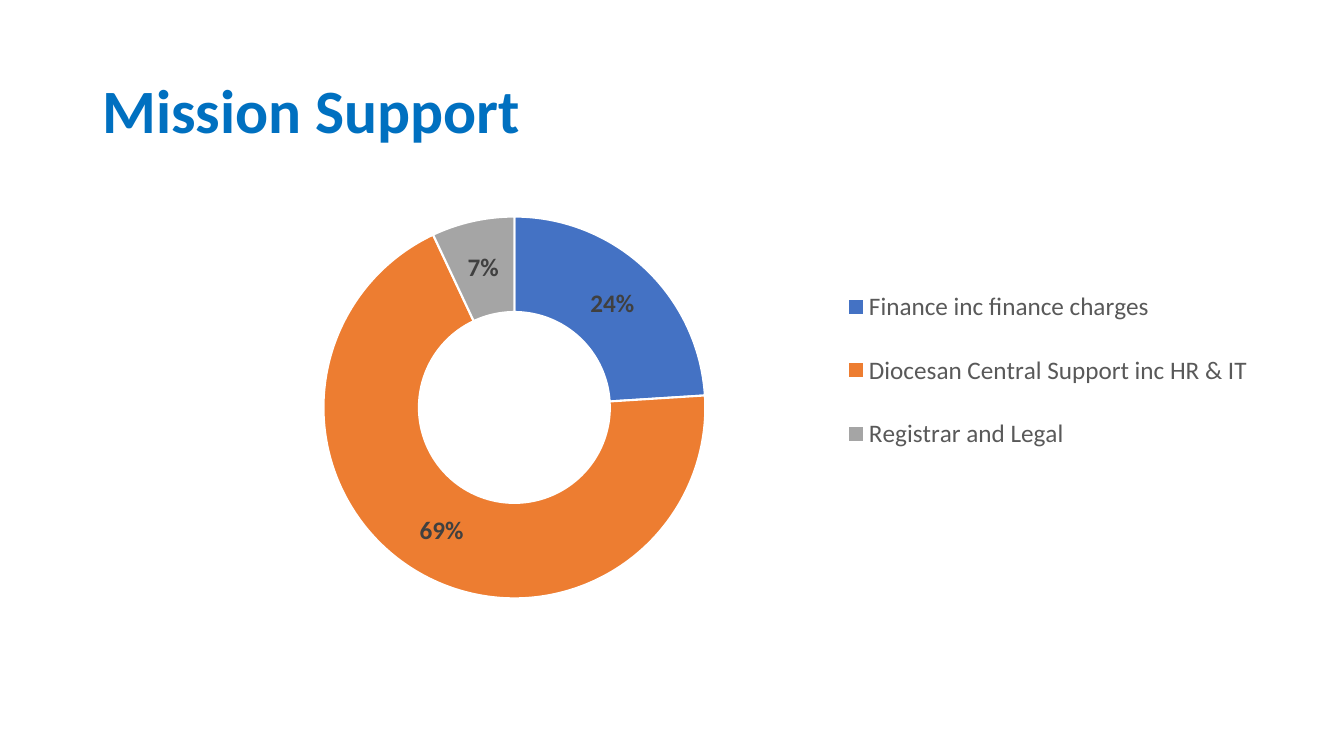
from lxml.etree import SubElement
from pptx import Presentation
from pptx.chart.data import CategoryChartData
from pptx.dml.color import RGBColor
from pptx.enum.chart import XL_CHART_TYPE, XL_LEGEND_POSITION
from pptx.enum.text import MSO_ANCHOR, PP_ALIGN
from pptx.oxml.ns import qn
from pptx.util import Cm, Pt

COLOURS = {
    "title": "0070C0",
    "finance": "4472C4",
    "central": "ED7D31",
    "legal": "A5A5A5",
    "label": "404040",
    "legend": "595959",
    "border": "FFFFFF",
}
SHARES = [
    ("Finance inc finance charges", 0.24, "finance"),
    ("Diocesan Central Support inc HR & IT", 0.69, "central"),
    ("Registrar and Legal", 0.07, "legal"),
]


def colour(name):
    return RGBColor.from_string(COLOURS[name])


def format_font(font, size, shade, bold=False):
    font.name = "Calibri"
    font.size = Pt(size)
    font.bold = bold
    font.color.rgb = colour(shade)


def write_text(frame, text, size, shade, bold=False, spacing=1.0):
    paragraph = frame.paragraphs[0]
    paragraph.alignment = PP_ALIGN.LEFT
    paragraph.line_spacing = spacing
    span = paragraph.add_run()
    span.text = text
    format_font(span.font, size, shade, bold)


def place_in_chart(part, index, inner=False, **fractions):
    """Give a chart part a fixed layout, in fractions of the chart frame."""
    for old in part.findall(qn("c:layout")):
        part.remove(old)
    layout = part.makeelement(qn("c:layout"))
    part.insert(index, layout)
    manual = SubElement(layout, qn("c:manualLayout"))
    if inner:
        SubElement(manual, qn("c:layoutTarget")).set("val", "inner")
    for axis in "xy":
        SubElement(manual, qn(f"c:{axis}Mode")).set("val", "edge")
    for side in "xywh":
        SubElement(manual, qn(f"c:{side}")).set("val", str(fractions[side]))


class SlideBuilder:
    def __init__(self, page):
        self.page = page

    def title(self, text, left, top, width, height):
        box = self.page.shapes.title
        box.left, box.top = Cm(left), Cm(top)
        box.width, box.height = Cm(width), Cm(height)
        box.text_frame.word_wrap = True
        box.text_frame.vertical_anchor = MSO_ANCHOR.MIDDLE
        write_text(box.text_frame, text, 44, "title", bold=True, spacing=0.9)

    def doughnut(self, shares, left, top, width, height):
        data = CategoryChartData(number_format="0%")
        data.categories = [name for name, _, _ in shares]
        data.add_series("Series 1", [value for _, value, _ in shares])
        chart = self.page.shapes.add_chart(
            XL_CHART_TYPE.DOUGHNUT, Cm(left), Cm(top), Cm(width), Cm(height), data
        ).chart
        chart.has_title = False
        chart.font.name = "Calibri"
        chart.font.size = Pt(10)

        plot = chart.plots[0]
        for index, (_, _, shade) in enumerate(shares):
            piece = plot.series[0].points[index].format
            piece.fill.solid()
            piece.fill.fore_color.rgb = colour(shade)
            piece.line.color.rgb = colour("border")
            piece.line.width = Pt(1.5)

        labels = plot.series[0].data_labels
        labels.show_value = True
        labels.show_percentage = False
        labels.number_format = "0%"
        labels.number_format_is_linked = False
        format_font(labels.font, 18, "label", bold=True)

        chart.has_legend = True
        chart.legend.position = XL_LEGEND_POSITION.RIGHT
        chart.legend.include_in_layout = False
        format_font(chart.legend.font, 18, "legend")

        plot_area = chart.element.find(".//" + qn("c:plotArea"))
        legend = chart.element.find(".//" + qn("c:legend"))
        place_in_chart(plot_area, 0, inner=True, x=0.14, y=0.03, w=0.34, h=0.94)
        place_in_chart(legend, 1, x=0.6, y=0.14, w=0.37, h=0.54)


def main():
    deck = Presentation()
    deck.slide_width, deck.slide_height = Cm(33.87), Cm(19.05)
    builder = SlideBuilder(deck.slides.add_slide(deck.slide_layouts[5]))
    builder.title("Mission Support", 2.33, 1.01, 29.21, 3.68)
    builder.doughnut(SHARES, 4.19, 5.05, 28.3, 10.44)
    deck.save("out.pptx")


if __name__ == "__main__":
    main()
